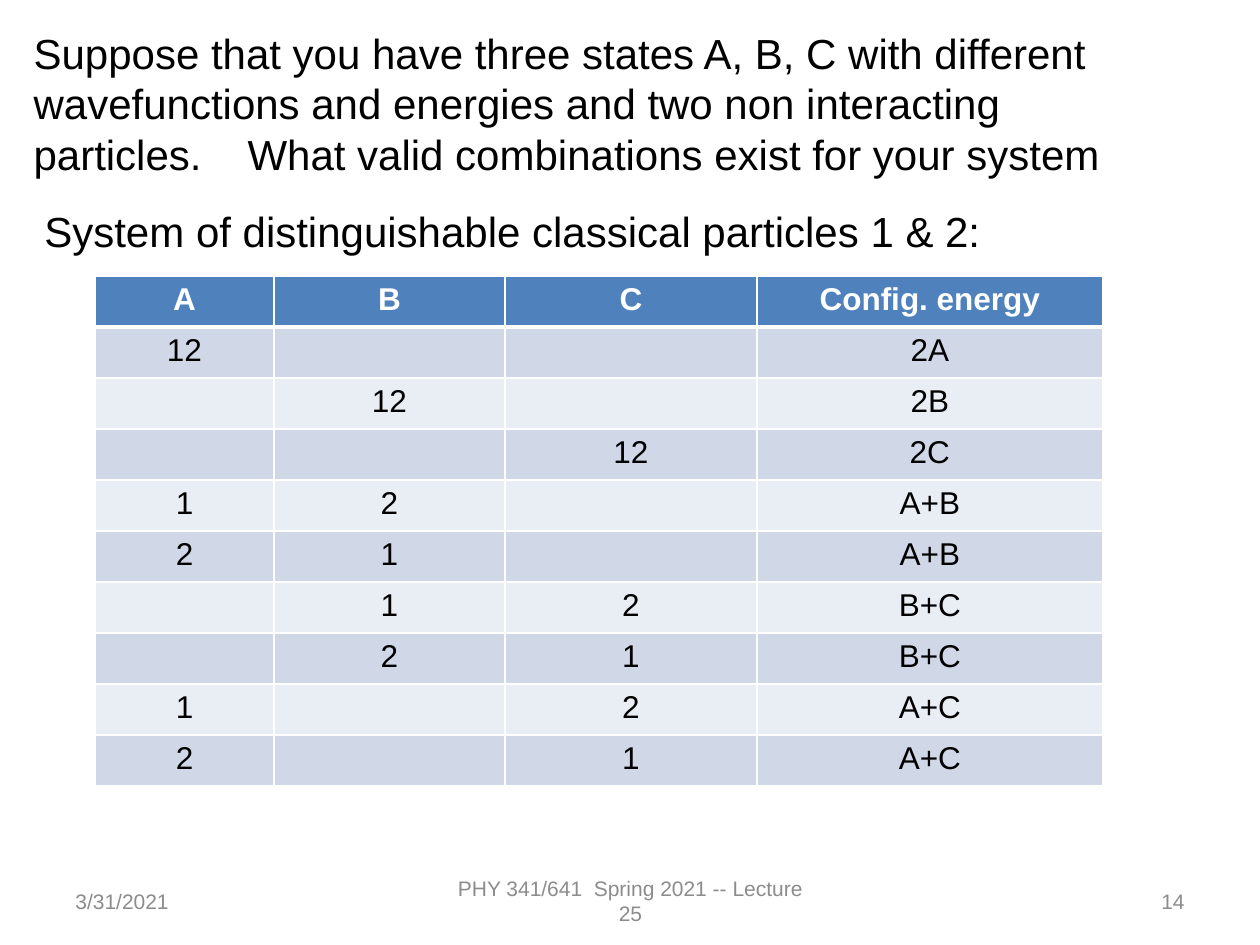
from lxml.etree import SubElement
from pptx import Presentation
from pptx.dml.color import RGBColor
from pptx.enum.text import MSO_ANCHOR, MSO_AUTO_SIZE, PP_ALIGN
from pptx.oxml.ns import qn
from pptx.util import Pt

PX = 914400 // 126
LEFT, CENTER, RIGHT = PP_ALIGN.LEFT, PP_ALIGN.CENTER, PP_ALIGN.RIGHT
QUESTION = ("Suppose that you have three states A, B, C with different wavefunctions and "
            "energies and two non interacting particles.\tWhat valid combinations exist "
            "for your system")
QUESTION_BOX, QUESTION_TAB = (21, 21, 1155, 165), 214
SUBHEAD = "System of distinguishable classical particles 1 & 2:"
SUBHEAD_BOX = (32, 199, 1176, 63)
FOOTERS = [
    ("3/31/2021", (63, 876, 294, 50), LEFT),
    ("PHY 341/641  Spring 2021 -- Lecture 25", (431, 876, 399, 50), CENTER),
    ("14", (903, 876, 294, 50), RIGHT),
]
STATES = [
    ("A", "B", "C", "Config. energy"),
    ("12", "", "", "2A"),
    ("", "12", "", "2B"),
    ("", "", "12", "2C"),
    ("1", "2", "", "A+B"),
    ("2", "1", "", "A+B"),
    ("", "1", "2", "B+C"),
    ("", "2", "1", "B+C"),
    ("1", "", "2", "A+C"),
    ("2", "", "1", "A+C"),
]
TABLE_LEFT, TABLE_TOP, ROW_H = 95, 276, 51
COL_W = [179, 231, 252, 346]
HEADER, BANDS = "4F81BD", ("E9EDF4", "D0D8E8")


def rgb(value):
    return RGBColor.from_string(value)


def write(tf, text, size=24, color="000000", bold=False, align=LEFT, anchor=MSO_ANCHOR.TOP):
    tf.word_wrap = True
    tf.vertical_anchor = anchor
    p = tf.paragraphs[0]
    p.alignment = align
    if text:
        r = p.add_run()
        r.text = text
        r.font.name, r.font.size, r.font.bold = "Arial", Pt(size), bold
        r.font.color.rgb = rgb(color)
    return p


def add_text(slide, box, text, **fmt):
    sp = slide.shapes.add_textbox(*(v * PX for v in box))
    write(sp.text_frame, text, **fmt)


def set_borders(cell, bottom, top):
    tcPr = cell._tc.get_or_add_tcPr()
    for i, (side, width) in enumerate((("L", 1), ("R", 1), ("T", top), ("B", bottom))):
        ln = tcPr.makeelement(qn(f"a:ln{side}"), {"w": str(Pt(width))})
        SubElement(SubElement(ln, qn("a:solidFill")), qn("a:srgbClr"), val="FFFFFF")
        tcPr.insert(i, ln)


def add_states(slide):
    frame = slide.shapes.add_table(len(STATES), len(COL_W), TABLE_LEFT * PX, TABLE_TOP * PX,
                                   sum(COL_W) * PX, len(STATES) * ROW_H * PX)
    table = frame.table
    for col, width in zip(table.columns, COL_W):
        col.width = width * PX
    for i, values in enumerate(STATES):
        head = i == 0
        table.rows[i].height = ROW_H * PX
        for j, text in enumerate(values):
            cell = table.cell(i, j)
            cell.fill.solid()
            cell.fill.fore_color.rgb = rgb(HEADER if head else BANDS[i % 2])
            write(cell.text_frame, text, size=18, bold=head, align=CENTER,
                  color="FFFFFF" if head else "000000")
            set_borders(cell, bottom=3 if head else 1, top=3 if i == 1 else 1)


def add_question(slide):
    title = slide.shapes.title
    title.left, title.top, title.width, title.height = (v * PX for v in QUESTION_BOX)
    title.text_frame.auto_size = MSO_AUTO_SIZE.NONE
    p = write(title.text_frame, QUESTION)
    tabs = SubElement(p._p.get_or_add_pPr(), qn("a:tabLst"))
    SubElement(tabs, qn("a:tab"), pos=str(QUESTION_TAB * PX), algn="l")


def main():
    """Build the slide on two distinguishable particles in three states."""
    prs = Presentation()
    prs.slide_width, prs.slide_height = 1260 * PX, 945 * PX
    s = prs.slides.add_slide(prs.slide_layouts[5])
    for text, box, align in FOOTERS:
        add_text(s, box, text, size=12, color="8C8C8C", align=align, anchor=MSO_ANCHOR.MIDDLE)
    add_question(s)
    add_states(s)
    add_text(s, SUBHEAD_BOX, SUBHEAD)
    prs.save("out.pptx")


if __name__ == "__main__":
    main()
